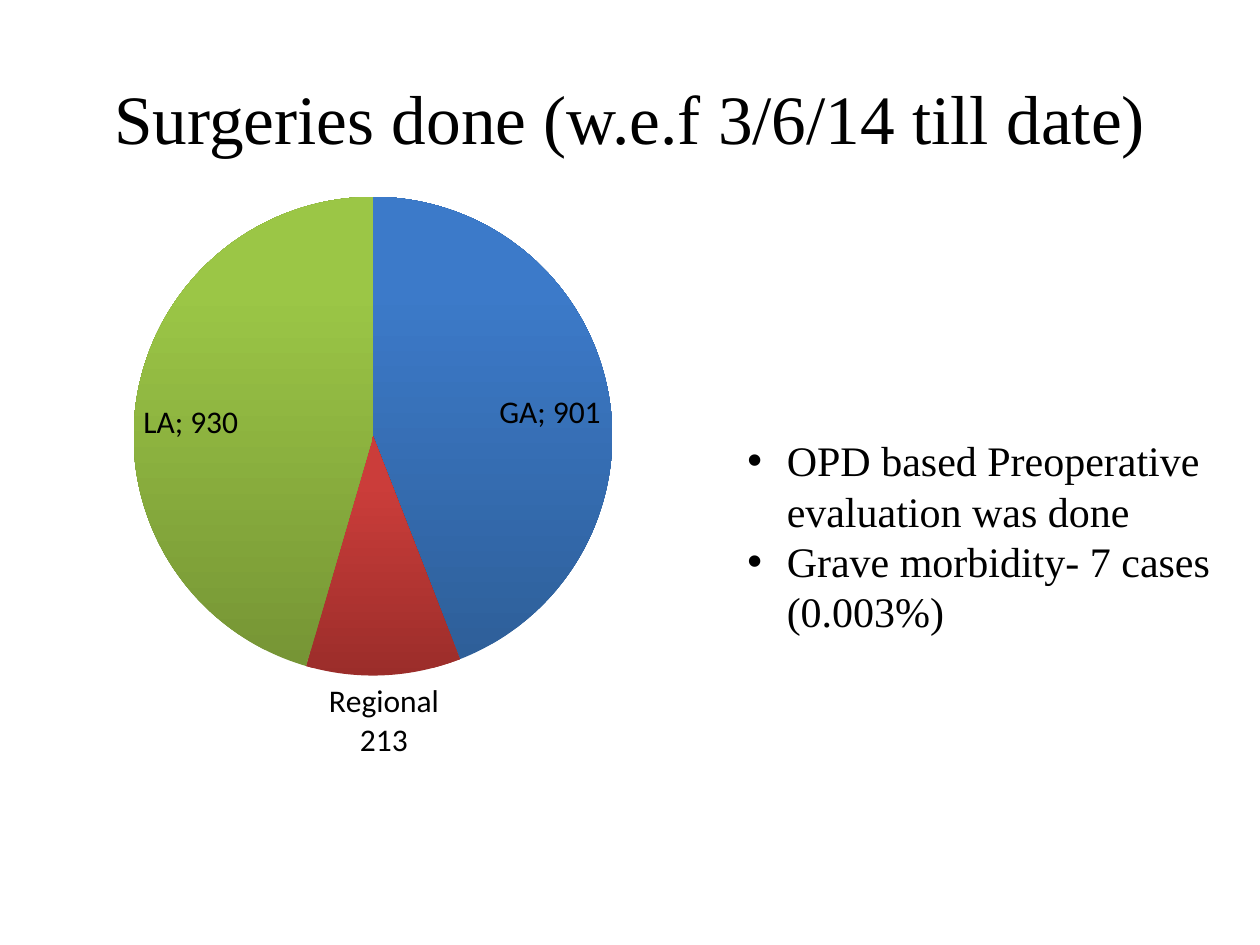
from lxml import etree
from pptx import Presentation
from pptx.chart import data as d
from pptx.dml import color as c
from pptx.enum import chart as ch, text as t
from pptx.oxml import ns
from pptx.util import Pt

COLORS = {
    "text": "000000",
    "GA": ("2E5F99", "3C7AC9"),
    "Regional": ("9B2D2A", "CB3D3A"),
    "LA": ("769535", "9BC646"),
}
CASES = {"GA": 901, "Regional": 213, "LA": 930}


def rgb(value):
    return c.RGBColor.from_string(value)


def add_text(slide, lines, left, top, width, height, size,
             align=t.PP_ALIGN.LEFT, anchor=t.MSO_ANCHOR.TOP, bullet=None, indent=0):
    box = slide.shapes.add_textbox(Pt(left), Pt(top), Pt(width), Pt(height))
    frame = box.text_frame
    frame.word_wrap = True
    frame.vertical_anchor = anchor
    frame.text = "\n".join(lines)
    for paragraph in frame.paragraphs:
        paragraph.alignment = align
        font = paragraph.runs[0].font
        font.name, font.size = "Times New Roman", Pt(size)
        font.color.rgb = rgb(COLORS["text"])
        if bullet:
            properties = paragraph._p.get_or_add_pPr()
            properties.set("marL", str(Pt(indent)))
            properties.set("indent", str(-Pt(indent)))
            etree.SubElement(properties, ns.qn("a:buFont"), typeface="Arial")
            etree.SubElement(properties, ns.qn("a:buChar"), char=bullet)


presentation = Presentation()
presentation.slide_width, presentation.slide_height = Pt(720), Pt(540)
slide = presentation.slides.add_slide(presentation.slide_layouts[6])

add_text(slide, ["Surgeries done (w.e.f 3/6/14 till date)"], 36, 21.6, 648, 90, 39.6,
         align=t.PP_ALIGN.CENTER, anchor=t.MSO_ANCHOR.MIDDLE)

chart_data = d.CategoryChartData()
chart_data.categories = list(CASES)
chart_data.add_series("Series 1", list(CASES.values()))
chart = slide.shapes.add_chart(ch.XL_CHART_TYPE.PIE, Pt(36), Pt(102.24), Pt(354.24), Pt(342),
                               chart_data).chart
chart.has_legend = False
chart.has_title = False
chart.font.name, chart.font.size = "Calibri", Pt(18)
chart.font.color.rgb = rgb(COLORS["text"])

plot = chart.plots[0]
plot.vary_by_categories = True
series = plot.series[0]
for index, category in enumerate(CASES):
    fill = series.points[index].format.fill
    fill.gradient()
    fill.gradient_angle = 90
    for stop, value, position in zip(fill.gradient_stops, COLORS[category], (0, 0.8)):
        stop.color.rgb = rgb(value)
        stop.position = position

labels = series.data_labels
labels.show_category_name = labels.show_value = True
labels.show_percentage = False
labels.position = ch.XL_LABEL_POSITION.INSIDE_END
separator = etree.Element(ns.qn("c:separator"))
separator.text = "; "
labels._element.find(ns.qn("c:showBubbleSize")).addnext(separator)

regional_label = series.points[1].data_label
regional_label.text_frame.text = f"Regional\n{CASES['Regional']}"
regional_label.position = ch.XL_LABEL_POSITION.OUTSIDE_END
for paragraph in regional_label.text_frame.paragraphs:
    font = paragraph.runs[0].font
    font.name, font.size = "Calibri", Pt(18)
    font.color.rgb = rgb(COLORS["text"])

area = chart._chartSpace.chart.plotArea
for old_layout in area.findall(ns.qn("c:layout")):
    area.remove(old_layout)
layout = etree.Element(ns.qn("c:layout"))
manual = etree.SubElement(layout, ns.qn("c:manualLayout"))
for tag, value in (("layoutTarget", "inner"), ("xMode", "edge"), ("yMode", "edge"),
                   ("x", 0.11), ("y", 0.03), ("w", 0.78), ("h", 0.8)):
    etree.SubElement(manual, ns.qn(f"c:{tag}"), val=str(value))
area.insert(0, layout)

add_text(slide, ["OPD based Preoperative evaluation was done", "Grave morbidity- 7 cases (0.003%)"],
         420, 244.8, 282, 123.84, 24, bullet="•", indent=22.5)

presentation.save("out.pptx")
